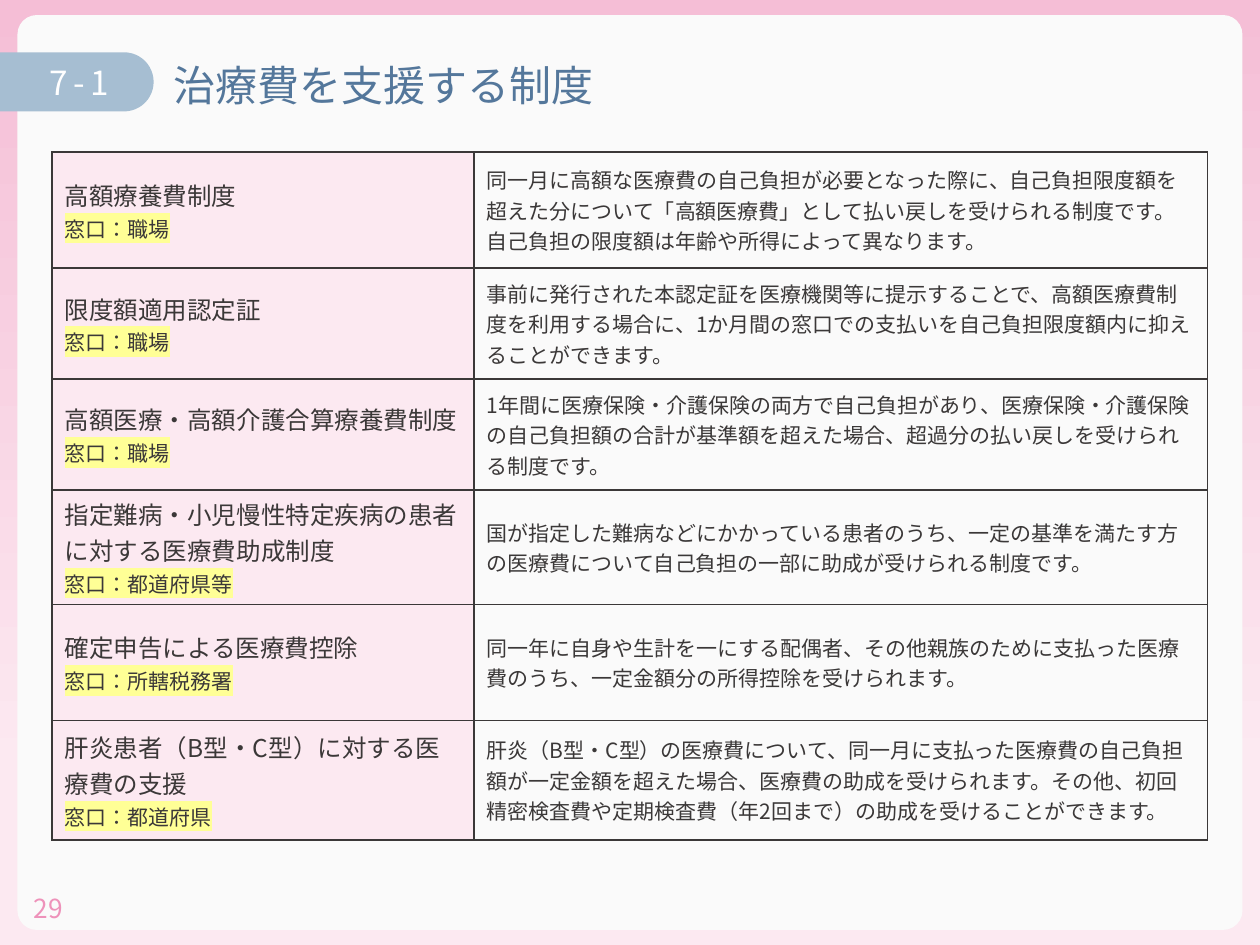
from dataclasses import dataclass

from lxml import etree
from pptx import Presentation
from pptx.dml.color import RGBColor
from pptx.enum.shapes import MSO_SHAPE
from pptx.enum.text import MSO_ANCHOR, MSO_AUTO_SIZE, PP_ALIGN
from pptx.oxml.ns import qn
from pptx.util import Pt

RECTANGLE = MSO_SHAPE.RECTANGLE
ROUNDED = MSO_SHAPE.ROUNDED_RECTANGLE
TAB = MSO_SHAPE.ROUND_2_SAME_RECTANGLE
TOP, MIDDLE = MSO_ANCHOR.TOP, MSO_ANCHOR.MIDDLE
LEFT, CENTER = PP_ALIGN.LEFT, PP_ALIGN.CENTER
TITLE_ONLY = 5


@dataclass(frozen=True)
class Theme:
    font: str = "Noto Sans CJK JP"
    ink: str = "3B3838"
    pink: str = "F5BED6"
    pale_pink: str = "FCE9F1"
    page_pink: str = "EE92BA"
    panel: str = "FAFAFA"
    tab: str = "A6BED2"
    title: str = "54779B"
    white: str = "FFFFFF"
    marker: str = "FFFF96"
    title_size: float = 24
    section_size: float = 19
    page_size: float = 15
    name_size: float = 14
    body_size: float = 12


THEME = Theme()
COLUMN_WIDTHS = (241.2, 419.04)
ROW_HEIGHTS = (66.2, 63.4, 63.4, 63.4, 66.2, 68.4)
# Programme name, contact office, explanation
PROGRAMMES = (
    ("高額療養費制度", "職場",
     "同一月に高額な医療費の自己負担が必要となった際に、自己負担限度額を超えた分について"
     "「高額医療費」として払い戻しを受けられる制度です。"
     "自己負担の限度額は年齢や所得によって異なります。"),
    ("限度額適用認定証", "職場",
     "事前に発行された本認定証を医療機関等に提示することで、高額医療費制度を利用する場合に、"
     "1か月間の窓口での支払いを自己負担限度額内に抑えることができます。"),
    ("高額医療・高額介護合算療養費制度", "職場",
     "1年間に医療保険・介護保険の両方で自己負担があり、医療保険・介護保険の自己負担額の"
     "合計が基準額を超えた場合、超過分の払い戻しを受けられる制度です。"),
    ("指定難病・小児慢性特定疾病の患者に対する医療費助成制度", "都道府県等",
     "国が指定した難病などにかかっている患者のうち、一定の基準を満たす方の医療費について"
     "自己負担の一部に助成が受けられる制度です。"),
    ("確定申告による医療費控除", "所轄税務署",
     "同一年に自身や生計を一にする配偶者、その他親族のために支払った医療費のうち、"
     "一定金額分の所得控除を受けられます。"),
    ("肝炎患者（B型・C型）に対する医療費の支援", "都道府県",
     "肝炎（B型・C型）の医療費について、同一月に支払った医療費の自己負担額が一定金額を"
     "超えた場合、医療費の助成を受けられます。その他、初回精密検査費や定期検査費"
     "（年2回まで）の助成を受けることができます。"),
)


def rgb(value):
    return RGBColor.from_string(value)


def write(paragraph, text, *, size=THEME.body_size, color=THEME.ink, align=LEFT,
          line_spacing=None, tracking=0, highlight=None):
    paragraph.alignment = align
    if line_spacing:
        paragraph.line_spacing = line_spacing
    run = paragraph.add_run()
    run.text = text
    run.font.size = Pt(size)
    run.font.color.rgb = rgb(color)
    run.font.name = THEME.font
    properties = run.font._element
    properties.set("lang", "ja-JP")
    if tracking:
        properties.set("spc", str(tracking * 100))
    latin = properties.find(qn("a:latin"))
    east_asian = etree.Element(qn("a:ea"), typeface=THEME.font)
    latin.addnext(east_asian)
    if highlight:
        marker = etree.Element(qn("a:highlight"))
        etree.SubElement(marker, qn("a:srgbClr"), val=highlight)
        latin.addprevious(marker)


def set_frame(frame, margins, anchor):
    frame.word_wrap = True
    frame.auto_size = MSO_AUTO_SIZE.NONE
    frame.vertical_anchor = anchor
    (frame.margin_left, frame.margin_top,
     frame.margin_right, frame.margin_bottom) = map(Pt, margins)


def add_block(slide, kind, box, color, adjustments=()):
    block = slide.shapes.add_shape(kind, *map(Pt, box))
    block.shadow.inherit = False
    block.line.fill.background()
    block.fill.solid()
    block.fill.fore_color.rgb = rgb(color)
    for index, value in enumerate(adjustments):
        block.adjustments[index] = value
    return block


def add_label(slide, text, box, margins, anchor, **style):
    frame = slide.shapes.add_textbox(*map(Pt, box)).text_frame
    set_frame(frame, margins, anchor)
    write(frame.paragraphs[0], text, **style)


def add_backdrop(slide):
    backdrop = add_block(slide, RECTANGLE, (0, 0, 720, 540), THEME.pink)
    backdrop.fill.gradient()
    backdrop.fill.gradient_angle = 270
    stops = ((0, THEME.pink), (0.82, THEME.pale_pink))
    for stop, (position, color) in zip(backdrop.fill.gradient_stops, stops):
        stop.position = position
        stop.color.rgb = rgb(color)
    add_block(slide, ROUNDED, (10, 8.6, 700, 522.8), THEME.panel, (0.021,))


def set_title(slide, text):
    """Fill the title placeholder and raise it above the backdrop."""
    title = slide.shapes.title
    title.left, title.top, title.width, title.height = map(Pt, (87.8, 30.2, 620, 39.6))
    set_frame(title.text_frame, (11.5, 0, 7.2, 0), MIDDLE)
    write(title.text_frame.paragraphs[0], text, size=THEME.title_size,
          color=THEME.title, line_spacing=0.9)
    tree = title._element.getparent()
    tree.append(title._element)


def format_cell(cell, fill=None):
    cell.vertical_anchor = MIDDLE
    if fill:
        cell.fill.solid()
        cell.fill.fore_color.rgb = rgb(fill)
    else:
        cell.fill.background()
    properties = cell._tc.get_or_add_tcPr()
    for index, side in enumerate(("lnL", "lnR", "lnT", "lnB")):
        border = etree.Element(qn(f"a:{side}"), w=str(Pt(1)))
        solid = etree.SubElement(border, qn("a:solidFill"))
        etree.SubElement(solid, qn("a:srgbClr"), val=THEME.ink)
        properties.insert(index, border)


def add_programme_table(slide):
    frame = slide.shapes.add_table(
        len(PROGRAMMES), len(COLUMN_WIDTHS), Pt(29.8), Pt(87),
        Pt(sum(COLUMN_WIDTHS)), Pt(sum(ROW_HEIGHTS)))
    table = frame.table
    table.first_row = table.horz_banding = False
    for column, width in zip(table.columns, COLUMN_WIDTHS):
        column.width = Pt(width)
    for row, height, (name, office, explanation) in zip(table.rows, ROW_HEIGHTS, PROGRAMMES):
        row.height = Pt(height)
        name_cell, explanation_cell = row.cells
        format_cell(name_cell, THEME.pale_pink)
        format_cell(explanation_cell)
        names = name_cell.text_frame
        write(names.paragraphs[0], name, size=THEME.name_size)
        write(names.add_paragraph(), f"窓口：{office}", highlight=THEME.marker)
        write(explanation_cell.text_frame.paragraphs[0], explanation)


def main():
    presentation = Presentation()
    presentation.slide_width, presentation.slide_height = Pt(720), Pt(540)
    slide = presentation.slides.add_slide(presentation.slide_layouts[TITLE_ONLY])
    add_backdrop(slide)
    add_programme_table(slide)
    add_label(slide, "29", (12.2, 506.2, 162, 28.8), (7.2, 3.6, 7.2, 3.6), TOP,
              size=THEME.page_size, color=THEME.page_pink)
    section_tab = add_block(slide, TAB, (27, 2.9, 33.8, 87.8), THEME.tab, (0.5, 0))
    section_tab.rotation = 90
    add_label(slide, "7-1", (4.3, 32.4, 82, 28.8), (0, 2.9, 0, 0), MIDDLE,
              size=THEME.section_size, color=THEME.white, align=CENTER,
              line_spacing=0.9, tracking=3)
    set_title(slide, "治療費を支援する制度")
    presentation.save("out.pptx")


if __name__ == "__main__":
    main()
